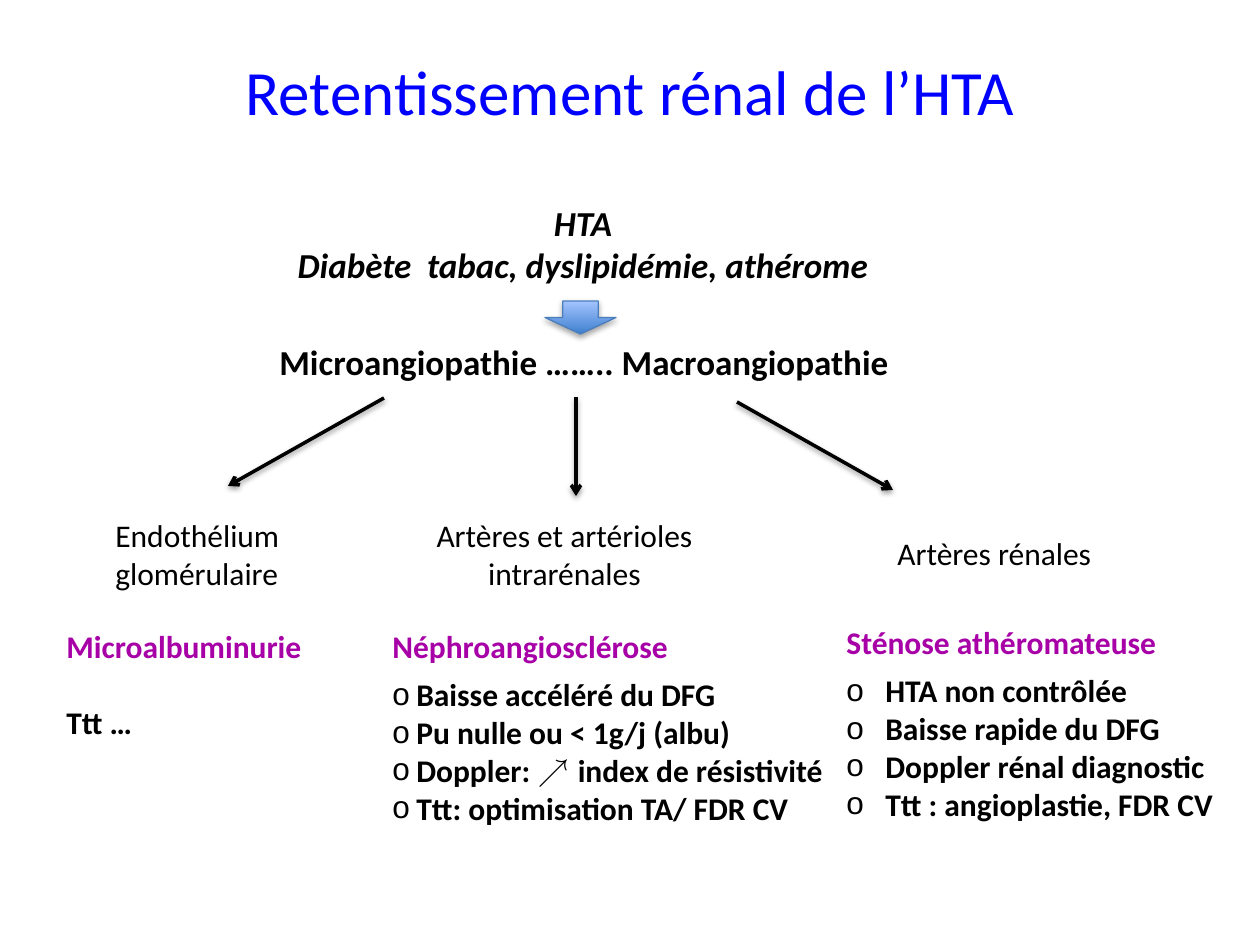
from dataclasses import dataclass

import pptx
import pptx.dml.color
import pptx.enum.dml
import pptx.enum.shapes
import pptx.enum.text
import pptx.oxml
import pptx.oxml.ns
import pptx.util

EMU_PER_PX = 914400 // 126
BLACK, BLUE, PURPLE = "000000", "0000FF", "A700A7"
RISING = "↗ "
NAMESPACE = pptx.oxml.ns.nsdecls("a")
CENTER = pptx.enum.text.PP_ALIGN.CENTER
LEFT = pptx.enum.text.PP_ALIGN.LEFT


@dataclass
class Line:
    text: str
    color: str = BLACK
    bold: bool = False
    italic: bool = False
    size: int = 18
    bullet_indent: int = 0
    before: int = 0
    after: int = 0


@dataclass
class Block:
    left: int
    top: int
    width: int
    height: int
    lines: list[Line]
    centered: bool = False
    wrap: bool = False


@dataclass
class Arrow:
    start: tuple[int, int]
    end: tuple[int, int]


def px(length: int) -> int:
    return pptx.util.Emu(length * EMU_PER_PX)


def rgb(color: str) -> pptx.dml.color.RGBColor:
    return pptx.dml.color.RGBColor.from_string(color)


def add_shadow(properties, distance: int, opacity: int) -> None:
    properties.append(pptx.oxml.parse_xml(
        f'<a:effectLst {NAMESPACE}><a:outerShdw blurRad="40000" dist="{distance}" '
        f'dir="5400000" rotWithShape="0"><a:srgbClr val="{BLACK}">'
        f'<a:alpha val="{opacity * 1000}"/></a:srgbClr></a:outerShdw></a:effectLst>'))


def add_bullet(paragraph, indent: int) -> None:
    properties = paragraph._p.get_or_add_pPr()
    properties.set("marL", str(px(indent)))
    properties.set("indent", str(-px(indent)))
    for bullet in ('buFont {} typeface="Arial"', 'buChar {} char="o"'):
        properties.append(pptx.oxml.parse_xml(f"<a:{bullet.format(NAMESPACE)}/>"))


def write_line(paragraph, line: Line) -> None:
    paragraph.space_before = pptx.util.Pt(line.before)
    paragraph.space_after = pptx.util.Pt(line.after)
    if line.bullet_indent:
        add_bullet(paragraph, line.bullet_indent)
    for piece in filter(None, line.text.partition(RISING)):
        run = paragraph.add_run()
        run.text = piece
        font = run.font
        font.name = "Arial" if piece == RISING else "Calibri"
        font.size = pptx.util.Pt(line.size)
        font.bold, font.italic = line.bold, line.italic
        font.color.rgb = rgb(line.color)


def draw_block(slide, block: Block) -> None:
    box = slide.shapes.add_textbox(
        px(block.left), px(block.top), px(block.width), px(block.height))
    frame = box.text_frame
    frame.word_wrap = block.wrap
    for number, line in enumerate(block.lines):
        paragraph = frame.add_paragraph() if number else frame.paragraphs[0]
        paragraph.alignment = CENTER if block.centered else LEFT
        write_line(paragraph, line)


def draw_arrow(slide, arrow: Arrow) -> None:
    connector = slide.shapes.add_connector(
        pptx.enum.shapes.MSO_CONNECTOR.STRAIGHT,
        *map(px, arrow.start + arrow.end))
    connector.line.color.rgb = rgb(BLACK)
    connector.line.width = pptx.util.Pt(2)
    connector.line._get_or_add_ln().append(
        pptx.oxml.parse_xml(f'<a:tailEnd {NAMESPACE} type="arrow"/>'))
    add_shadow(connector._element.spPr, distance=20000, opacity=38)


def draw_down_arrow(slide, left: int, top: int, width: int, height: int) -> None:
    down_arrow = slide.shapes.add_shape(
        pptx.enum.shapes.MSO_SHAPE.DOWN_ARROW, px(left), px(top), px(width), px(height))
    down_arrow.fill.gradient()
    down_arrow.fill.gradient_angle = 90
    for stop, color in zip(down_arrow.fill.gradient_stops, ("3F80CE", "A4C4FF")):
        stop.color.rgb = rgb(color)
    down_arrow.line.color.rgb = rgb("4B7EBC")
    down_arrow.line.width = pptx.util.Pt(0.75)
    add_shadow(down_arrow._element.spPr, distance=23000, opacity=35)


def findings(heading: str, indent: int, signs: list[str]) -> list[Line]:
    return [Line(heading, PURPLE, bold=True, after=6)] + [
        Line(sign, bold=True, bullet_indent=indent) for sign in signs]


BLOCKS = [
    # Title
    Block(63, 46, 1134, 110, [Line("Retentissement rénal de l’HTA", BLUE, size=36)],
          centered=True, wrap=True),
    # Causes and vascular damage
    Block(278, 195, 610, 97, [
        Line(text, bold=True, italic=True, size=20)
        for text in ("HTA", "Diabète  tabac, dyslipidémie, athérome")], centered=True),
    Block(267, 334, 641, 55,
          [Line("Microangiopathie …….. Macroangiopathie", bold=True, size=20)]),
    # Affected vessels
    Block(103, 510, 192, 89, [Line("Endothélium"), Line("glomérulaire")]),
    Block(422, 510, 285, 89,
          [Line("Artères et artérioles"), Line("intrarénales")], centered=True),
    Block(885, 528, 222, 50, [Line("Artères rénales")]),
    # Consequences
    Block(54, 621, 265, 127, [
        Line("Microalbuminurie", PURPLE, bold=True),
        Line("Ttt …", bold=True, before=22)]),
    Block(380, 621, 456, 214, findings("Néphroangiosclérose", 24, [
        "Baisse accéléré du DFG",
        "Pu nulle ou < 1g/j (albu)",
        "Doppler: ↗ index de résistivité",
        "Ttt: optimisation TA/ FDR CV"])),
    Block(834, 617, 397, 214, findings("Sténose athéromateuse", 39, [
        "HTA non contrôlée",
        "Baisse rapide du DFG",
        "Doppler rénal diagnostic",
        "Ttt : angioplastie, FDR CV"])),
]

ARROWS = [
    Arrow((576, 397), (576, 496)),
    Arrow((384, 398), (228, 486)),
    Arrow((737, 402), (893, 490)),
]


def main() -> None:
    presentation = pptx.Presentation()
    presentation.slide_width, presentation.slide_height = px(1260), px(945)
    slide = presentation.slides.add_slide(presentation.slide_layouts[6])
    for block in BLOCKS:
        draw_block(slide, block)
    for arrow in ARROWS:
        draw_arrow(slide, arrow)
    draw_down_arrow(slide, 545, 301, 71, 33)
    presentation.save("out.pptx")


if __name__ == "__main__":
    main()
